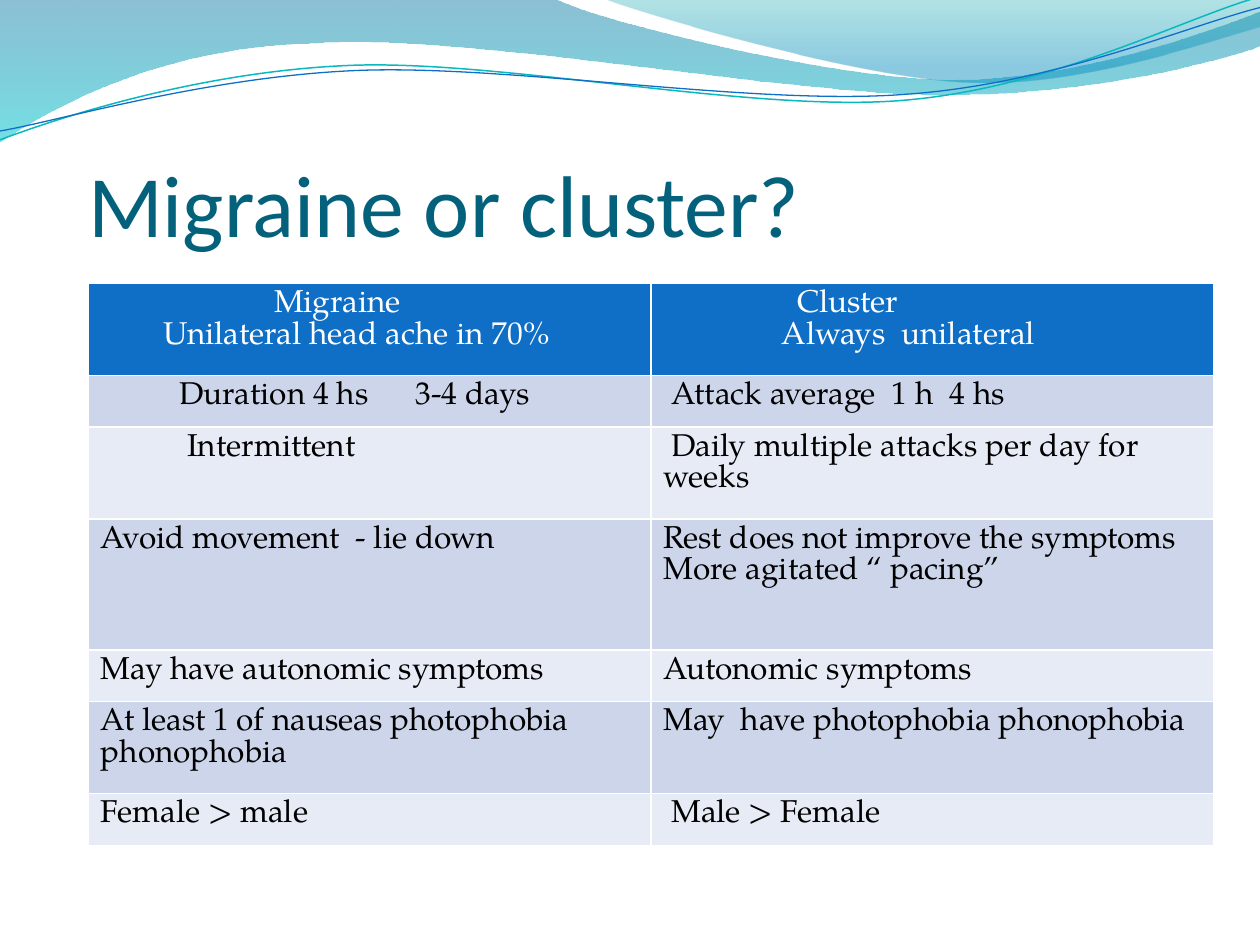
from lxml import etree
from pptx import Presentation, util as u
from pptx.dml.color import RGBColor
from pptx.enum import text
from pptx.oxml import ns

W, H = 10, 7.5
LEFT = 0.7
rgb = RGBColor.from_string
deck = Presentation()
deck.slide_width, deck.slide_height = u.Inches(W), u.Inches(H)
slide = deck.slides.add_slide(deck.slide_layouts[6])


def add_wave(start, segments, closed):
    """Outline from points (x, y) and cubic curves (x1, y1, x2, y2, x, y), in inches."""
    builder = slide.shapes.build_freeform(*map(u.Inches, start))
    builder.add_line_segments([tuple(map(u.Inches, s[-2:])) for s in segments], close=closed)
    wave = builder.convert_to_shape()
    wave.shadow.inherit = False
    # Bend each straight segment that has control points
    lines = list(wave._element.iter(ns.qn("a:lnTo")))
    for line, segment in zip(lines, segments):
        if len(segment) == 6:
            line.tag = ns.qn("a:cubicBezTo")
            for i in (0, 2):
                control = etree.Element(ns.qn("a:pt"), x=str(u.Inches(segment[i]) - wave.left),
                                        y=str(u.Inches(segment[i + 1]) - wave.top))
                line.insert(i // 2, control)
    return wave


# Translucent bands: start, segments, gradient stops (position, colour, opacity %)
bands = [
    ((0, 0), [(4.4, -0.01), (4.76, 0.17, 6.64, 0.63, 7.58, 0.63),
              (8.53, 0.63, 9.58, 0.26, 10, 0.09), (10.01, 0.36),
              (9.83, 0.44, 8.7, 0.76, 7.46, 0.75), (6.22, 0.75, 3.82, 0.28, 2.57, 0.34),
              (1.29, 0.36, 0.46, 0.83, -0.01, 1.13)],
     [(0, "0074A1", 45), (1, "00C6CF", 55)]),
    ((4.79, -0.01), [(5.09, 0.11, 6.82, 0.62, 7.69, 0.65),
                     (8.56, 0.69, 9.61, 0.32, 10, 0.21), (10, 0)],
     [(0, "00A1A9", 30), (0.8, "008BBF", 45)]),
]
for start, segments, stops in bands:
    band = add_wave(start, segments, True)
    band.line.fill.background()
    band.fill.gradient()
    band.fill.gradient_angle = 270
    for stop, (position, color, opacity) in zip(band.fill.gradient_stops, stops):
        stop.position = position
        stop.color.rgb = rgb(color)
    for color_xml, (_, _, opacity) in zip(band._element.spPr.iter(ns.qn("a:srgbClr")), stops):
        etree.SubElement(color_xml, ns.qn("a:alpha"), val=str(opacity * 1000))

# Thin wave lines
strands = [
    ((0, 1.11), [(0.48, 0.93, 1.58, 0.57, 2.77, 0.52), (3.95, 0.47, 5.93, 0.89, 7.13, 0.8),
                 (8.33, 0.71, 9.38, 0.15, 9.98, -0.02)], "0AB8BF", 0.85),
    ((0, 1.04), [(0.47, 0.96, 1.64, 0.61, 2.83, 0.56), (4.03, 0.51, 5.97, 0.84, 7.17, 0.75),
                 (8.36, 0.67, 9.41, 0.21, 10, 0.06)], "0F6FC6", 0.75),
]
for start, segments, color, width in strands:
    strand = add_wave(start, segments, False)
    strand.fill.background()
    strand.line.color.rgb = rgb(color)
    strand.line.width = u.Pt(width)

# Title
title = slide.shapes.add_textbox(*map(u.Inches, (LEFT, 0, 8.27, 2.02))).text_frame
title.word_wrap = True
title.vertical_anchor = text.MSO_ANCHOR.BOTTOM
title.margin_left = title.margin_right = title.margin_bottom = 0
heading = title.paragraphs[0]
heading.text = "Migraine or cluster?"
heading.font.name, heading.font.size = "Calibri", u.Pt(50)
heading.font.color.rgb = rgb("04617B")

# Comparison: row height, then per cell its lines as (first-line indent in spaces, words)
comparison = [
    (0.73, [(22, "Migraine"), (8, "Unilateral head ache in 70%")],
     [(17, "Cluster"), (15, "Always  unilateral")]),
    (0.41, [(10, "Duration 4 hs\t3-4 days")], [(1, "Attack average  1 h  4 hs")]),
    (0.73, [(11, "Intermittent")], [(1, "Daily multiple attacks per day for weeks")]),
    (1.04, [(0, "Avoid movement  - lie down")],
     [(0, "Rest does not improve the symptoms"), (0, "More agitated “ pacing”")]),
    (0.41, [(0, "May have autonomic symptoms")], [(0, "Autonomic symptoms")]),
    (0.73, [(0, "At least 1 of nauseas photophobia phonophobia")],
     [(0, "May  have photophobia phonophobia")]),
    (0.41, [(0, "Female > male")], [(1, "Male > Female")]),
]
SPACE = u.Pt(4.5)
table = slide.shapes.add_table(len(comparison), 2, *map(u.Inches, (LEFT, 2.25, 8.93, 4.46))).table
table.first_row = table.horz_banding = False
for column in table.columns:
    column.width = u.Inches(8.93 / 2)

for r, (height, *sides) in enumerate(comparison):
    table.rows[r].height = u.Inches(height)
    for c, lines in enumerate(sides):
        cell = table.cell(r, c)
        for edge in ("lnL", "lnR", "lnT", "lnB"):
            border = etree.SubElement(cell._tc.get_or_add_tcPr(), ns.qn(f"a:{edge}"),
                                      w=str(u.Pt(1)))
            paint = etree.SubElement(border, ns.qn("a:solidFill"))
            etree.SubElement(paint, ns.qn("a:srgbClr"), val="FFFFFF")
        cell.fill.solid()
        cell.fill.fore_color.rgb = rgb("0F6FC6" if r == 0 else ("E7EBF5", "CCD5EA")[r % 2])
        for i, (spaces, words) in enumerate(lines):
            frame = cell.text_frame
            line = frame.paragraphs[0] if i == 0 else frame.add_paragraph()
            line.text = words
            line.font.name, line.font.size = "TeX Gyre Pagella", u.Pt(18)
            line.font.color.rgb = rgb("FFFFFF" if r == 0 else "000000")
            props = line._p.get_or_add_pPr()
            props.set("marL", "0")
            props.set("indent", str(spaces * SPACE))
            if "\t" in words:
                tabs = etree.Element(ns.qn("a:tabLst"))
                etree.SubElement(tabs, ns.qn("a:tab"), pos=str(u.Inches(2.25)), algn="l")
                props.insert(0, tabs)

deck.save("out.pptx")
